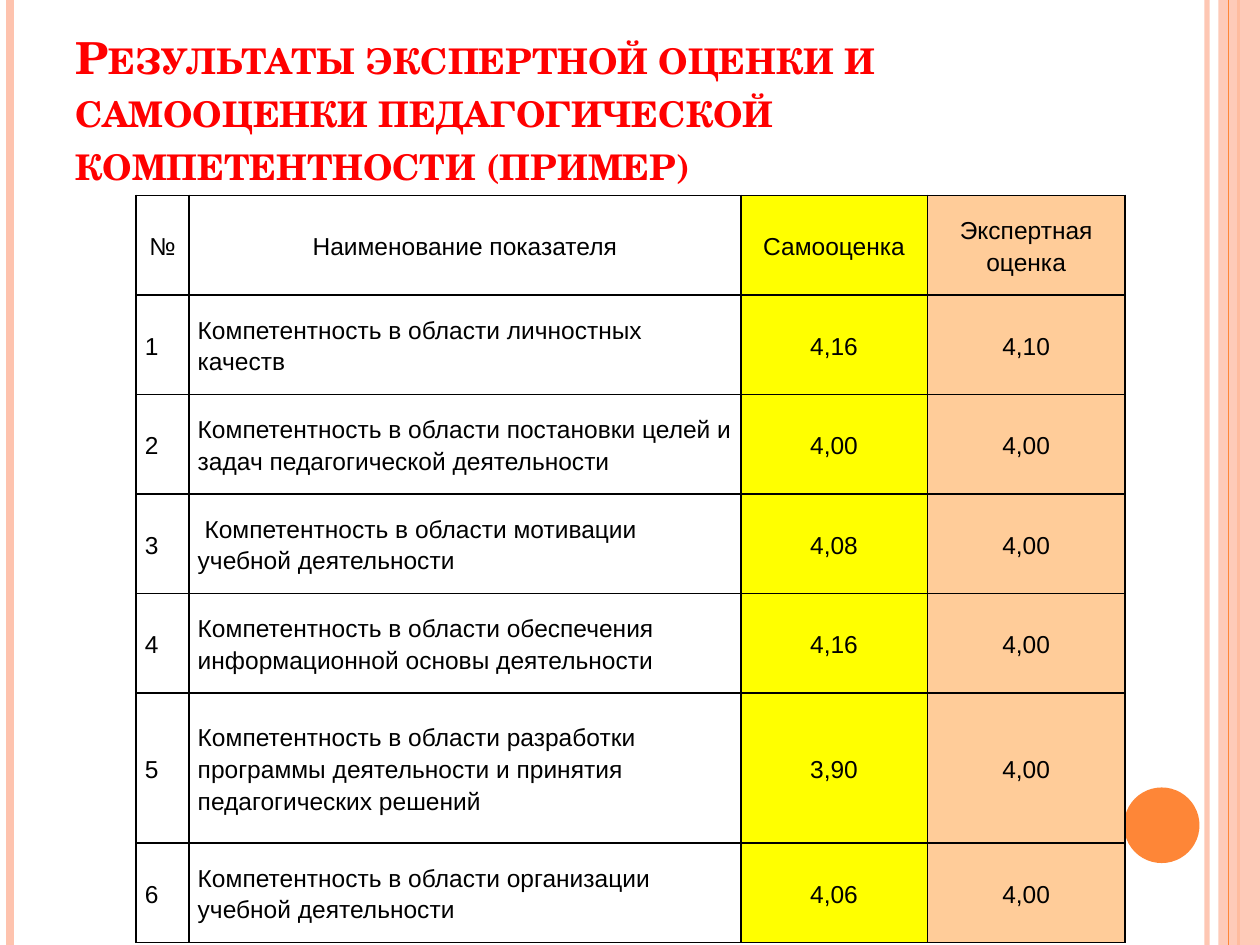
import pptx
import pptx.dml.color
import pptx.enum.shapes
import pptx.enum.text
import pptx.oxml
import pptx.oxml.ns
import pptx.util
from pptx.util import Inches

PEACH, ORANGE, BLACK = "FEC3AE", "FE8637", "000000"
COLUMN_WIDTHS = [0.42, 4.38, 1.48, 1.57]
COLUMN_FILLS = [None, None, "FFFF00", "FFCC99"]
ROW_HEIGHT, TALL_ROW_HEIGHT = 0.79, 1.19
TALL_ROW = 5
HEADER = ["№", "Наименование показателя", "Самооценка", "Экспертная оценка"]
RATINGS = [
    ("Компетентность в области личностных качеств", "4,16", "4,10"),
    ("Компетентность в области постановки целей и задач педагогической деятельности", "4,00", "4,00"),
    (" Компетентность в области мотивации учебной деятельности", "4,08", "4,00"),
    ("Компетентность в области обеспечения информационной основы деятельности", "4,16", "4,00"),
    ("Компетентность в области разработки программы деятельности и принятия педагогических решений",
     "3,90", "4,00"),
    ("Компетентность в области организации учебной деятельности", "4,06", "4,00"),
]


def rgb(color):
    return pptx.dml.color.RGBColor.from_string(color)


def add_element(parent, tag, **attributes):
    element = pptx.oxml.ns.qn(tag)
    child = parent.makeelement(element, attributes)
    parent.append(child)
    return child


def set_opacity(shape, percent):
    color = next(shape._element.spPr.iter(pptx.oxml.ns.qn("a:srgbClr")))
    add_element(color, "a:alpha", val=str(percent * 1000))


def add_stripe(slide, x, color, width):
    stripe = slide.shapes.add_connector(
        pptx.enum.shapes.MSO_CONNECTOR.STRAIGHT, Inches(x), 0, Inches(x), Inches(7.5))
    stripe.line.color.rgb = rgb(color)
    stripe.line.width = pptx.util.Pt(width)
    add_element(stripe._element.spPr, "a:effectLst")
    return stripe


def add_filled_shape(slide, kind, left, top, width, height, color):
    shape = slide.shapes.add_shape(kind, Inches(left), Inches(top), Inches(width), Inches(height))
    shape.shadow.inherit = False
    shape.fill.solid()
    shape.fill.fore_color.rgb = rgb(color)
    shape.line.fill.background()
    return shape


def add_title(slide, text):
    title = slide.shapes.add_textbox(Inches(0.5), Inches(0.3), Inches(8.17), Inches(1.25))
    frame = title.text_frame
    frame.word_wrap = True
    frame.vertical_anchor = pptx.enum.text.MSO_ANCHOR.BOTTOM
    heading = frame.paragraphs[0]
    run = heading.add_run()
    run.text = text
    run.font.name = "TeX Gyre Schola"
    run.font.size = pptx.util.Pt(25.2)
    run.font.bold = True
    run.font.color.rgb = rgb("FF0000")
    run.font._element.set("cap", "small")


def add_borders(cell):
    properties = cell._tc.get_or_add_tcPr()
    for position, side in enumerate(("a:lnL", "a:lnR", "a:lnT", "a:lnB")):
        border = add_element(properties, side, w=str(pptx.util.Pt(1)))
        add_element(add_element(border, "a:solidFill"), "a:srgbClr", val=BLACK)
        properties.insert(position, border)


def fill_cell(cell, text, color, centered):
    cell.text = text
    cell.margin_left = cell.margin_right = Inches(0.07)
    cell.margin_top = cell.margin_bottom = 0
    cell.vertical_anchor = pptx.enum.text.MSO_ANCHOR.MIDDLE
    paragraph = cell.text_frame.paragraphs[0]
    paragraph.line_spacing = 1.15
    if centered:
        paragraph.alignment = pptx.enum.text.PP_ALIGN.CENTER
    paragraph.font.name = "Arial"
    paragraph.font.size = pptx.util.Pt(14)
    paragraph.font.color.rgb = rgb(BLACK)
    if color:
        cell.fill.solid()
        cell.fill.fore_color.rgb = rgb(color)
    else:
        cell.fill.background()
    add_borders(cell)


def add_ratings_table(slide):
    rows = [HEADER] + [(str(number), *rating) for number, rating in enumerate(RATINGS, 1)]
    table = slide.shapes.add_table(
        len(rows), len(HEADER), Inches(1.08), Inches(1.55), Inches(7.85), Inches(5.95)).table
    table.horz_banding = False
    for column, width in zip(table.columns, COLUMN_WIDTHS):
        column.width = Inches(width)
    for r, row in enumerate(rows):
        table.rows[r].height = Inches(TALL_ROW_HEIGHT if r == TALL_ROW else ROW_HEIGHT)
        for c, text in enumerate(row):
            fill_cell(table.cell(r, c), text, COLUMN_FILLS[c], centered=r == 0 or c >= 2)
    table.first_row = False


def main():
    presentation = pptx.Presentation()
    presentation.slide_width, presentation.slide_height = Inches(10), Inches(7.5)
    slide = presentation.slides.add_slide(presentation.slide_layouts[6])

    # Edge decoration
    shapes = pptx.enum.shapes.MSO_SHAPE
    set_opacity(add_stripe(slide, 9.58, PEACH, 3), 93)
    add_stripe(slide, 0.08, PEACH, 4.5)
    add_stripe(slide, 9.83, ORANGE, 1.5)
    set_opacity(add_filled_shape(slide, shapes.RECTANGLE, 9.67, 0, 0.33, 7.5, PEACH), 87)
    add_stripe(slide, 9.75, ORANGE, 0.75)
    add_filled_shape(slide, shapes.OVAL, 8.92, 6.25, 0.6, 0.6, ORANGE)

    # Ratings and title
    add_ratings_table(slide)
    add_title(slide, "Результаты экспертной оценки и самооценки педагогической компетентности (пример)")

    presentation.save("out.pptx")


if __name__ == "__main__":
    main()
